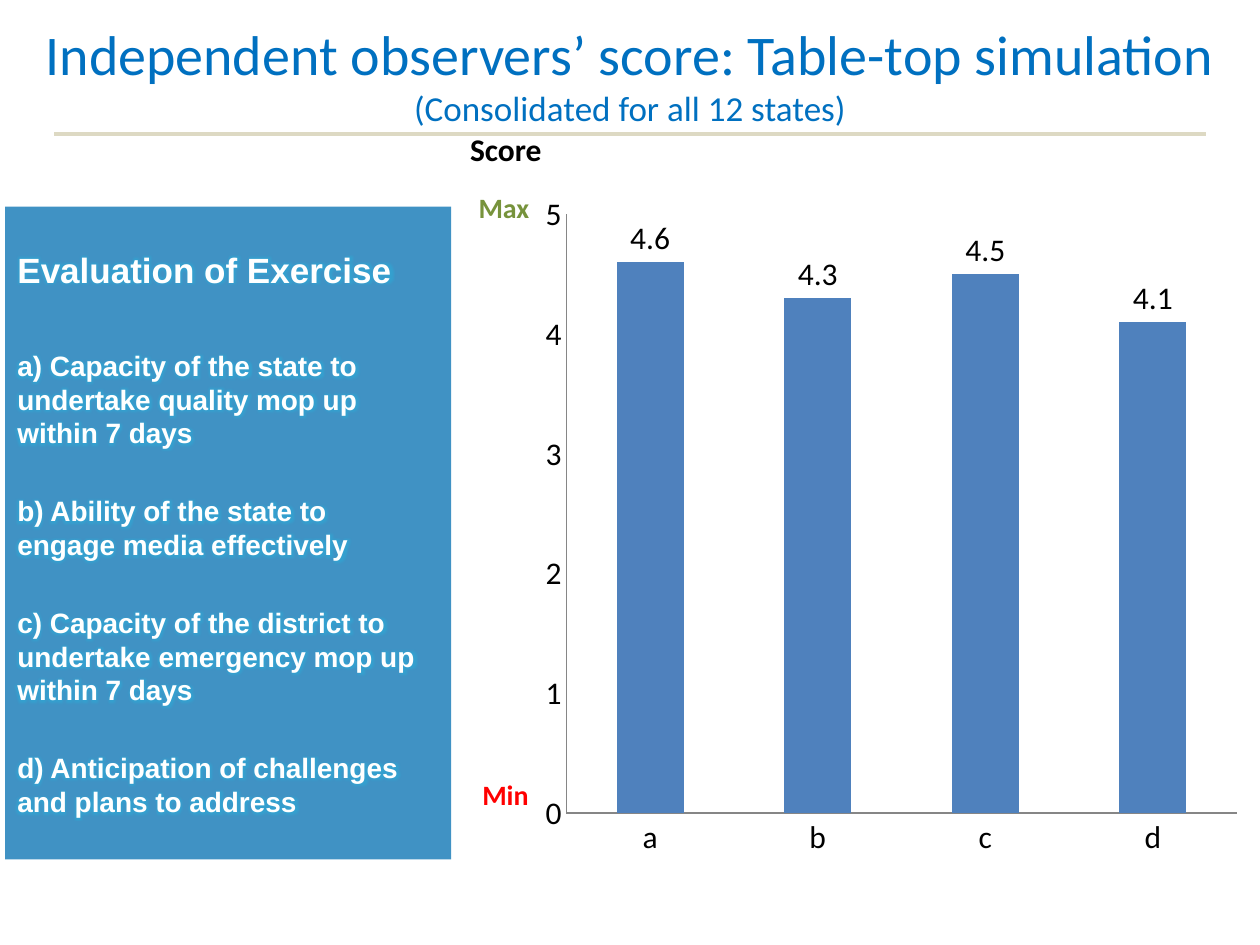
from lxml import etree
from pptx import Presentation
from pptx import util as u
from pptx.chart.data import CategoryChartData
from pptx.dml.color import RGBColor
from pptx.enum import chart as ch, shapes, text
from pptx.oxml import parse_xml
from pptx.oxml.ns import nsdecls, qn

BLUE, BLACK, WHITE = "0070C0", "000000", "FFFFFF"
LEFT, CENTER = text.PP_ALIGN.LEFT, text.PP_ALIGN.CENTER
TOP, MIDDLE, BOTTOM = text.MSO_ANCHOR.TOP, text.MSO_ANCHOR.MIDDLE, text.MSO_ANCHOR.BOTTOM


def rgb(value):
    return RGBColor.from_string(value)


class SlideBuilder:
    """Holds the style and the current slide, with a method for each kind of element."""

    def __init__(self, prs, font="Calibri", panel_font="Arial"):
        self.font, self.panel_font = font, panel_font
        self.s = prs.slides.add_slide(prs.slide_layouts[6])

    def style(self, font, size, color, bold=False, name=None):
        font.name, font.size, font.bold = name or self.font, u.Pt(size), bold
        font.color.rgb = rgb(color)

    def text(self, box, lines, color, bold=False, align=LEFT, anchor=TOP, wrap=True):
        sp = self.s.shapes.add_textbox(*map(u.Inches, box))
        tf = sp.text_frame
        tf.word_wrap, tf.vertical_anchor = wrap, anchor
        if not wrap:
            tf.auto_size = text.MSO_AUTO_SIZE.SHAPE_TO_FIT_TEXT
        for i, (line, size) in enumerate(lines):
            p = tf.paragraphs[0] if i == 0 else tf.add_paragraph()
            p.text, p.alignment = line, align
            self.style(p.font, size, color, bold)

    def panel(self, box, fill, glow, heading, items):
        sp = self.s.shapes.add_shape(shapes.MSO_SHAPE.RECTANGLE, *map(u.Inches, box))
        sp.shadow.inherit = False
        sp.fill.solid()
        sp.fill.fore_color.rgb = rgb(fill)
        sp.line.fill.background()
        tf = sp.text_frame
        tf.word_wrap, tf.vertical_anchor = True, MIDDLE
        for i, line in enumerate([heading] + items):
            p = tf.paragraphs[0] if i == 0 else tf.add_paragraph()
            p.text, p.alignment = line, LEFT
            self.style(p.font, 16 if i else 20, WHITE, True, self.panel_font)
            if i:
                p.line_spacing = u.Pt(19.2)
                p.space_before = u.Pt(33.5 if i == 1 else 25.4)
            for r in p.runs:
                r._r.get_or_add_rPr().append(parse_xml(
                    f'<a:effectLst {nsdecls("a")}><a:glow rad="63500"><a:srgbClr val="{glow}">'
                    '<a:alpha val="40000"/></a:srgbClr></a:glow></a:effectLst>'))

    def rule(self, x1, x2, y, color, width):
        line = self.s.shapes.add_connector(
            shapes.MSO_CONNECTOR.STRAIGHT, *map(u.Inches, (x1, y, x2, y)))
        line.line.color.rgb, line.line.width = rgb(color), u.Pt(width)
        etree.SubElement(line._element.spPr, qn("a:effectLst"))

    def columns(self, box, categories, values, color, plot_area):
        data = CategoryChartData()
        data.categories = categories
        data.add_series("Series 1", values)
        chart = self.s.shapes.add_chart(
            ch.XL_CHART_TYPE.COLUMN_CLUSTERED, *map(u.Inches, box), data).chart
        self.style(chart.font, 18, BLACK)
        chart.has_legend = chart.has_title = False
        for axis in (chart.category_axis, chart.value_axis):
            axis.major_tick_mark = axis.minor_tick_mark = ch.XL_TICK_MARK.NONE
            axis.has_major_gridlines = False
            axis.format.line.color.rgb = rgb("868686")
        axis = chart.value_axis
        axis.minimum_scale, axis.maximum_scale, axis.major_unit = 0, 5, 1
        axis.tick_labels.number_format = "General"
        axis.tick_labels.number_format_is_linked = False
        plot = chart.plots[0]
        plot.gap_width, plot.vary_by_categories = 150, False
        plot.series[0].format.fill.solid()
        plot.series[0].format.fill.fore_color.rgb = rgb(color)
        labels = plot.series[0].data_labels
        labels.show_value = True
        labels.number_format, labels.number_format_is_linked = "#,##0.0", False
        labels.position = ch.XL_LABEL_POSITION.OUTSIDE_END
        area = chart._chartSpace.chart.plotArea
        for old in area.findall(qn("c:layout")):
            area.remove(old)
        settings = [("layoutTarget", "inner"), ("xMode", "edge"), ("yMode", "edge")]
        settings += zip("xywh", plot_area)
        marks = "".join(f'<c:{tag} val="{value}"/>' for tag, value in settings)
        area.insert(0, parse_xml(
            f'<c:layout {nsdecls("c")}><c:manualLayout>{marks}</c:manualLayout></c:layout>'))


def main():
    prs = Presentation()
    prs.slide_width, prs.slide_height = u.Inches(10), u.Inches(7.5)
    b = SlideBuilder(prs)
    b.panel((0.04, 1.64, 3.54, 5.18), "4092C4", "23B5E0", "Evaluation of Exercise", [
        "a) Capacity of the state to undertake quality mop up within 7 days",
        "b) Ability of the state to\vengage media effectively",
        "c) Capacity of the district to undertake emergency mop up within 7 days",
        "d) Anticipation of challenges and plans to address",
    ])
    b.text((3.58, 0.99, 0.87, 0.39), [("Score", 18)], BLACK, True, CENTER, MIDDLE)
    b.text((3.7, 1.46, 0.61, 0.37), [("Max", 16)], "77933C", True, wrap=False)
    b.text((3.73, 6.12, 0.57, 0.37), [("Min", 16)], "FF0000", True, wrap=False)
    b.columns((4.21, 1.43, 5.72, 5.46), list("abcd"), (4.6, 4.3, 4.5, 4.1),
              "4F81BD", (0.05, 0.05, 0.93, 0.87))
    b.text((0, 0.01, 10, 1.06), [
        ("Independent observers’ score: Table-top simulation", 32),
        ("(Consolidated for all 12 states)", 20),
    ], BLUE, align=CENTER, anchor=BOTTOM)
    b.rule(0.43, 9.57, 1.06, "DDD9C3", 2.25)
    prs.save("out.pptx")


if __name__ == "__main__":
    main()
